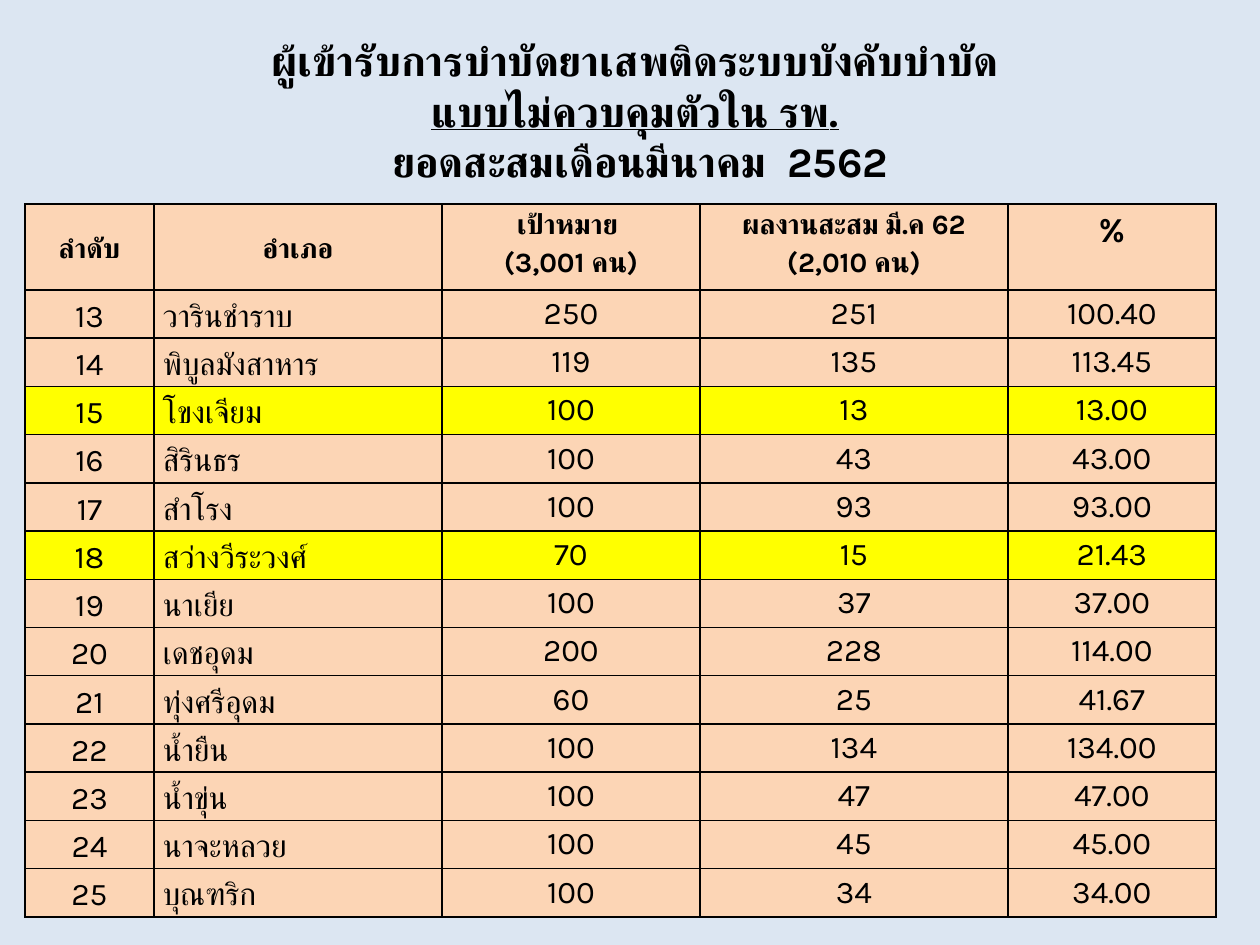
from copy import deepcopy

from lxml import etree
from pptx import Presentation, util as u
from pptx.dml.color import RGBColor
from pptx.enum import text
from pptx.oxml import ns

PX = 914400 / 126
FONT = "Karla"
BACKGROUND = RGBColor(0xDC, 0xE6, 0xF2)
PEACH = RGBColor(0xFC, 0xD5, 0xB5)
YELLOW = RGBColor(0xFF, 0xFF, 0x00)
BLACK = RGBColor(0, 0, 0)


def px(length):
    return u.Emu(round(length * PX))


def format_run(run, size, bold):
    run.font.size = u.Pt(size)
    run.font.bold = bold
    run.font.color.rgb = BLACK
    run.font.name = FONT
    thai = etree.SubElement(run.font._element, ns.qn("a:cs"))
    thai.set("typeface", FONT)


prs = Presentation()
prs.slide_width, prs.slide_height = px(1260), px(945)
slide = prs.slides.add_slide(prs.slide_layouts[5])
slide.background.fill.solid()
slide.background.fill.fore_color.rgb = BACKGROUND

# Title: three lines, the middle one underlined
title = slide.shapes.title
title.left, title.top, title.width, title.height = px(64), px(37), px(1142), px(147)
title.text_frame.text = (
    "ผู้เข้ารับการบำบัดยาเสพติดระบบบังคับบำบัด\v"
    "แบบไม่ควบคุมตัวใน รพ.\v"
    " ยอดสะสมเดือนมีนาคม  2562"
)
title.text_frame.vertical_anchor = text.MSO_ANCHOR.MIDDLE
heading = title.text_frame.paragraphs[0]
heading.alignment = text.PP_ALIGN.CENTER
for run in heading.runs:
    format_run(run, 24, True)
for line_break in heading._p.findall(ns.qn("a:br")):
    line_break.append(deepcopy(heading.runs[0].font._element))
heading.runs[1].font.underline = True

# Districts: name, target, cumulative result; numbered from 13
FIRST_NUMBER = 13
HIGHLIGHTED = {"โขงเจียม", "สว่างวีระวงศ์"}
districts = [
    ("วารินชำราบ", 250, 251),
    ("พิบูลมังสาหาร", 119, 135),
    ("โขงเจียม", 100, 13),
    ("สิรินธร", 100, 43),
    ("สำโรง", 100, 93),
    ("สว่างวีระวงศ์", 70, 15),
    ("นาเยีย", 100, 37),
    ("เดชอุดม", 200, 228),
    ("ทุ่งศรีอุดม", 60, 25),
    ("น้ำยืน", 100, 134),
    ("น้ำขุ่น", 100, 47),
    ("นาจะหลวย", 100, 45),
    ("บุณฑริก", 100, 34),
]
rows = [["ลำดับ", "อำเภอ", "เป้าหมาย \n(3,001 คน)",
         "ผลงานสะสม มี.ค 62\n(2,010 คน)", "%"]]
for number, (district, target, result) in enumerate(districts, FIRST_NUMBER):
    rows.append([str(number), district, str(target), str(result),
                 f"{100 * result / target:.2f}"])

# Table grid
column_widths = [129, 288, 258, 308, 208]
row_heights = [86] + [48.25] * len(districts)
table = slide.shapes.add_table(
    len(rows), len(column_widths), px(25), px(204),
    px(sum(column_widths)), px(sum(row_heights))).table
for column, width in zip(table.columns, column_widths):
    column.width = px(width)
for row, height in zip(table.rows, row_heights):
    row.height = px(height)

# Table cells
for r, values in enumerate(rows):
    is_header = r == 0
    for c, value in enumerate(values):
        cell = table.cell(r, c)
        cell.text_frame.text = value
        cell.margin_left = cell.margin_right = px(9)
        cell.margin_top = cell.margin_bottom = 0
        cell.vertical_anchor = text.MSO_ANCHOR.MIDDLE if c < 2 else text.MSO_ANCHOR.TOP
        cell.fill.solid()
        cell.fill.fore_color.rgb = YELLOW if values[1] in HIGHLIGHTED else PEACH

        size = 18
        if is_header:
            size = 20 if value == "%" else 16
        for paragraph in cell.text_frame.paragraphs:
            left_aligned = c == 1 and not is_header
            paragraph.alignment = text.PP_ALIGN.LEFT if left_aligned else text.PP_ALIGN.CENTER
            paragraph.line_spacing = 1.15
            for run in paragraph.runs:
                format_run(run, size, is_header)

        # Borders come before the fill in the cell properties
        properties = cell._tc.get_or_add_tcPr()
        for position, side in enumerate(("lnL", "lnR", "lnT", "lnB")):
            border = etree.Element(ns.qn(f"a:{side}"), w=str(u.Pt(1)))
            fill = etree.SubElement(border, ns.qn("a:solidFill"))
            etree.SubElement(fill, ns.qn("a:srgbClr"), val=str(BLACK))
            properties.insert(position, border)

prs.save("out.pptx")
